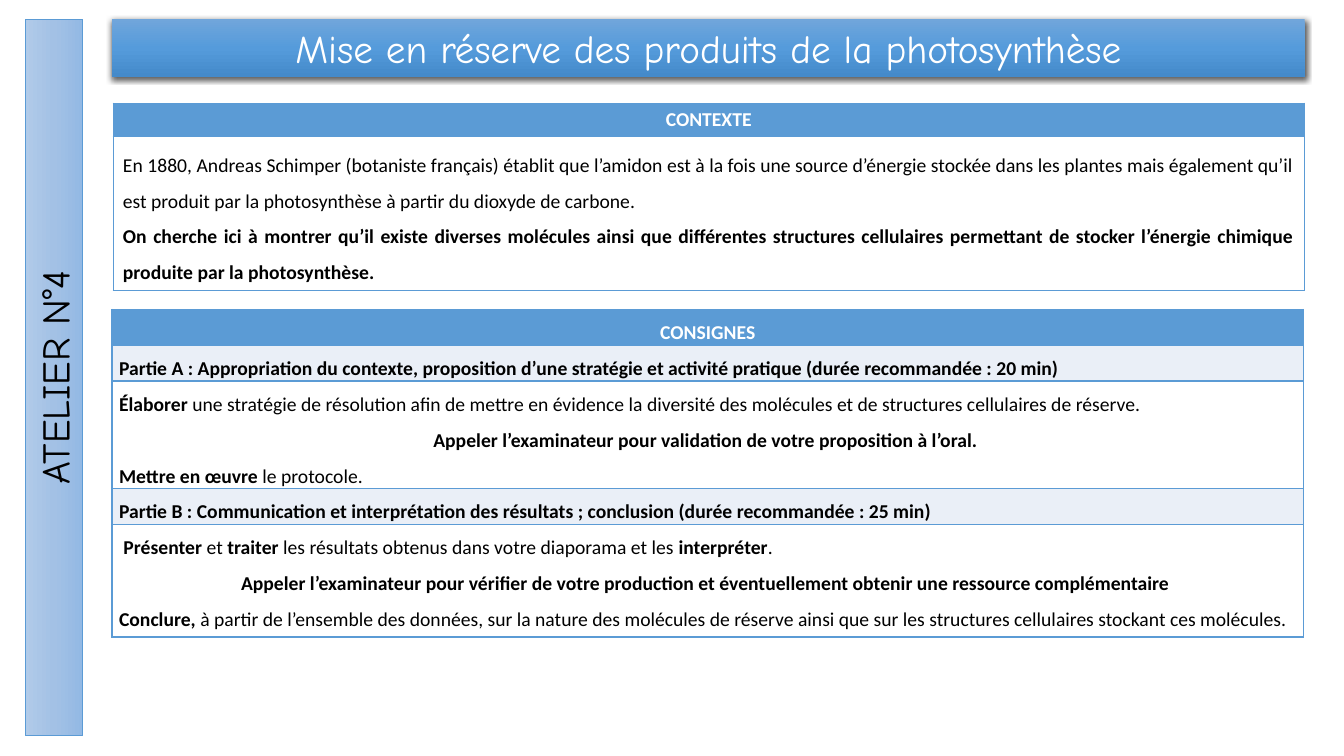
from pptx import Presentation
from pptx.dml.color import RGBColor
from pptx.enum.shapes import MSO_SHAPE
from pptx.enum.text import MSO_ANCHOR, PP_ALIGN
from pptx.oxml import parse_xml
from pptx.oxml.ns import nsdecls, qn
from pptx.util import Inches, Pt

COLORS = {
    "blue": "5B9BD5",
    "band": "EAEFF7",
    "white": "FFFFFF",
    "black": "000000",
    "sidebar": ["B1CBE9", "A3C1E5", "93B9E4"],
    "banner": ["71A6DB", "559BDB", "448ACA"],
}
CENTER, JUSTIFY = PP_ALIGN.CENTER, PP_ALIGN.JUSTIFY

presentation = Presentation()
presentation.slide_width = Inches(13.33)
presentation.slide_height = Inches(7.5)
slide = presentation.slides.add_slide(presentation.slide_layouts[6])
column = presentation.slide_width / 100
row = presentation.slide_height / 100


def write_paragraph(paragraph, text, alignment, color, size, font_name):
    paragraph.alignment = alignment
    for index, part in enumerate(text.split("*")):
        if part:
            run = paragraph.add_run()
            run.text = part
            formats = {"size": Pt(size), "name": font_name, "bold": index % 2 == 1}
            for attribute, value in formats.items():
                setattr(run.font, attribute, value)
            run.font.color.rgb = RGBColor.from_string(COLORS[color])


titles = [
    ("ATELIER N°4", -22.66, 46.13, 53.34, 270, "sidebar", "black"),
    ("Mise en réserve des produits de la photosynthèse", 8.33, 2.53, 88.75, 0, "banner", "white"),
]
for text, left, top, width, rotation, name, color in titles:
    shape = slide.shapes.add_shape(
        MSO_SHAPE.RECTANGLE, int(left * column), int(top * row), int(width * column), int(7.6 * row)
    )
    shape.rotation = rotation
    shape.shadow.inherit = False
    shape.fill.gradient()
    shape.fill.gradient_angle = 270
    properties = shape._element.spPr
    stops = properties.find(".//" + qn("a:gsLst"))
    stops.clear()
    for position, stop_color in enumerate(COLORS[name]):
        stops.append(parse_xml(
            f'<a:gs {nsdecls("a")} pos="{position * 50000}"><a:srgbClr val="{stop_color}"/></a:gs>'
        ))
    if name == "sidebar":
        shape.line.color.rgb = RGBColor.from_string(COLORS["blue"])
        shape.line.width = Pt(0.5)
    else:
        shape.line.fill.background()
        properties.find(qn("a:effectLst")).append(parse_xml(
            f'<a:outerShdw {nsdecls("a")} blurRad="{Pt(4.5)}" dist="{Pt(1.5)}" dir="5400000" '
            f'algn="ctr" rotWithShape="0"><a:srgbClr val="{COLORS["black"]}">'
            '<a:alpha val="63000"/></a:srgbClr></a:outerShdw>'
        ))
    shape.text_frame.word_wrap = True
    shape.text_frame.vertical_anchor = MSO_ANCHOR.MIDDLE
    write_paragraph(shape.text_frame.paragraphs[0], text, CENTER, color, 28, "Comic Neue")

context_rows = [
    (4.13, "blue", 1, 0, [(CENTER, "*CONTEXTE*")]),
    (15.87, "white", 1.5, 0, [
        (JUSTIFY, "En 1880, Andreas Schimper (botaniste français) établit que l’amidon est à la fois une source d’énergie stockée dans les plantes mais également qu’il est produit par la photosynthèse à partir du dioxyde de carbone."),
        (JUSTIFY, "*On cherche ici à montrer qu’il existe diverses molécules ainsi que différentes structures cellulaires permettant de stocker l’énergie chimique produite par la photosynthèse.*"),
    ]),
]
instruction_rows = [
    (3.73, "blue", 1.5, 0, [(CENTER, "*CONSIGNES*")]),
    (3.73, "band", 1.5, 6, [
        (JUSTIFY, "*Partie A : Appropriation du contexte, proposition d’une stratégie et activité pratique (durée recommandée : 20 min)*"),
    ]),
    (12.13, "white", 1.5, 0, [
        (JUSTIFY, "*Élaborer *une stratégie de résolution afin de mettre en évidence la diversité des molécules et de structures cellulaires de réserve."),
        (CENTER, "*Appeler l’examinateur pour validation de votre proposition à l’oral. *"),
        (JUSTIFY, "*Mettre en œuvre *le protocole."),
    ]),
    (3.73, "band", 1.5, 6, [
        (JUSTIFY, "*Partie B : Communication et interprétation des résultats ; conclusion (durée recommandée : 25 min)*"),
    ]),
    (14.93, "white", 1.5, 0, [
        (JUSTIFY, "* Présenter *et* traiter *les résultats obtenus dans votre diaporama et les *interpréter*."),
        (CENTER, "*Appeler l’examinateur pour vérifier de votre production et éventuellement obtenir une ressource complémentaire *"),
        (JUSTIFY, "*Conclure, *à partir de l’ensemble des données, sur la nature des molécules de réserve ainsi que sur les structures cellulaires stockant ces molécules."),
    ]),
]
tables = [
    (8.4, 13.6, 0.5, 0.75, 0.67, context_rows),
    (8.33, 40.93, 1, 0.53, 0, instruction_rows),
]
for left, top, border, side_margin, end_margin, rows in tables:
    total_height = sum(entry[0] for entry in rows)
    table = slide.shapes.add_table(
        len(rows), 1, int(left * column), int(top * row), int(88.67 * column), int(total_height * row)
    ).table
    table.horz_banding = False
    for index, (height, fill, spacing, space_after, paragraphs) in enumerate(rows):
        table.rows[index].height = int(height * row)
        cell = table.cell(index, 0)
        margins = {
            "margin_left": int(side_margin * column),
            "margin_right": int(side_margin * column),
            "margin_top": int(end_margin * row),
            "margin_bottom": int(end_margin * row),
        }
        for attribute, value in margins.items():
            setattr(cell, attribute, value)
        cell_properties = cell._tc.get_or_add_tcPr()
        for side in "LRTB":
            cell_properties.append(parse_xml(
                f'<a:ln{side} {nsdecls("a")} w="{Pt(border)}"><a:solidFill>'
                f'<a:srgbClr val="{COLORS["blue"]}"/></a:solidFill></a:ln{side}>'
            ))
        cell.fill.solid()
        cell.fill.fore_color.rgb = RGBColor.from_string(COLORS[fill])
        text_color = "white" if fill == "blue" else "black"
        for number, (alignment, text) in enumerate(paragraphs):
            paragraph = cell.text_frame.paragraphs[0] if number == 0 else cell.text_frame.add_paragraph()
            paragraph.line_spacing = spacing
            paragraph.space_after = Pt(space_after)
            write_paragraph(paragraph, text, alignment, text_color, 14, "Calibri")

presentation.save("out.pptx")
